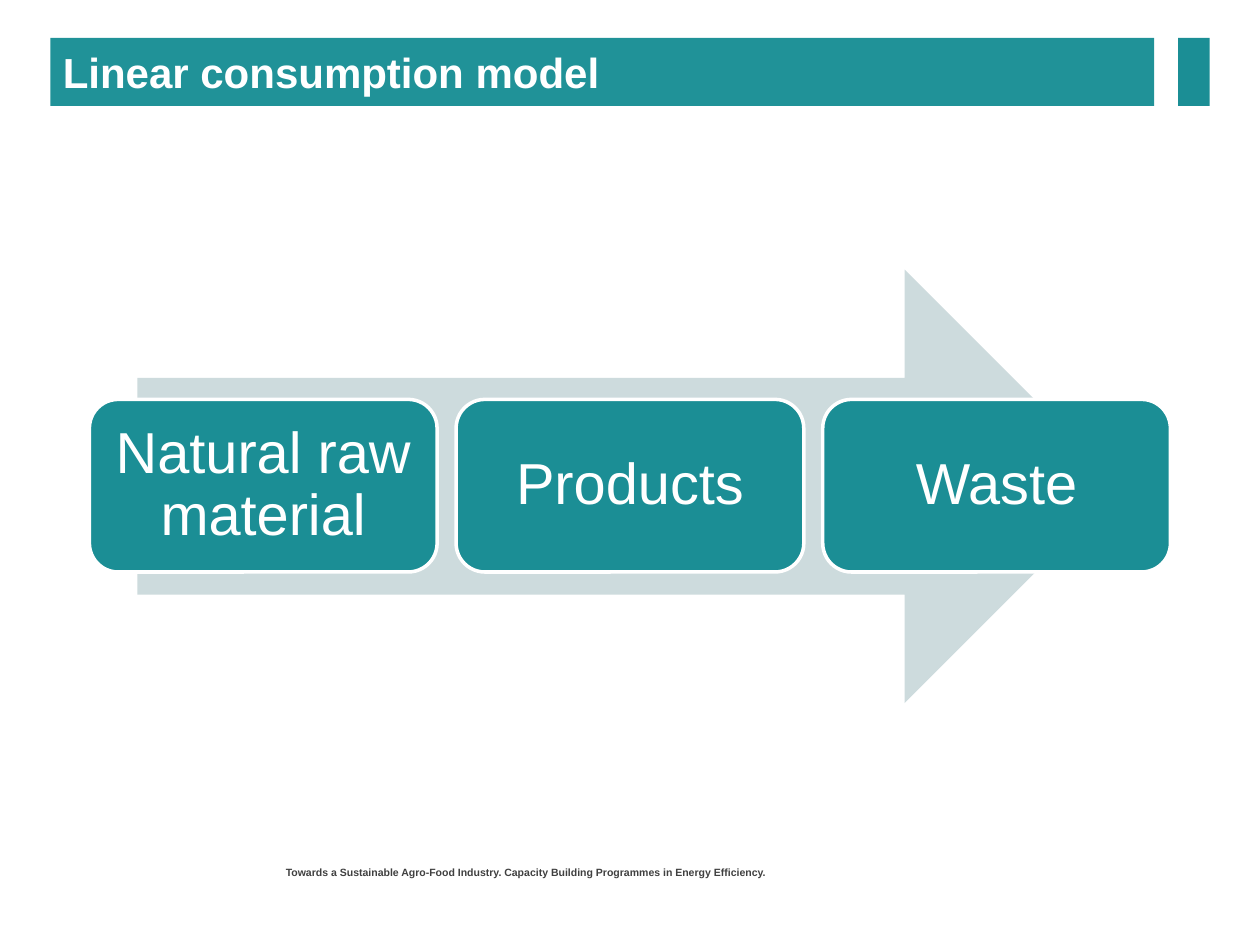
from pptx import Presentation
from pptx.dml.color import RGBColor
from pptx.enum.shapes import MSO_SHAPE as Shape
from pptx.enum.text import MSO_ANCHOR as Anchor, PP_ALIGN as Align
from pptx.util import Inches, Pt

FONT = "Arial"
TEAL = "1B8E95"
TITLE_TEAL = "209298"
PALE = "CDDBDD"
WHITE = "FFFFFF"
GREY = "404040"

STAGES = ["Natural raw material", "Products", "Waste"]
STAGE_LEFT, STAGE_TOP = 0.71, 3.17
STAGE_WIDTH, STAGE_HEIGHT = 2.76, 1.37
STAGE_PITCH = 2.91


def rgb(color):
    return RGBColor.from_string(color)


def write(sp, text, size, color, bold=False, align=Align.LEFT, anchor=Anchor.MIDDLE):
    tf = sp.text_frame
    tf.word_wrap = True
    tf.vertical_anchor = anchor
    p = tf.paragraphs[0]
    p.alignment = align
    r = p.add_run()
    r.text = text
    r.font.name = FONT
    r.font.size = Pt(size)
    r.font.bold = bold
    r.font.color.rgb = rgb(color)
    return p


def add_block(slide, kind, left, top, width, height, fill):
    sp = slide.shapes.add_shape(
        kind, Inches(left), Inches(top), Inches(width), Inches(height))
    sp.shadow.inherit = False
    sp.fill.solid()
    sp.fill.fore_color.rgb = rgb(fill)
    sp.line.fill.background()
    return sp


def add_stage(slide, index, text):
    left = STAGE_LEFT + index * STAGE_PITCH
    sp = add_block(slide, Shape.ROUNDED_RECTANGLE, left, STAGE_TOP,
                   STAGE_WIDTH, STAGE_HEIGHT, TEAL)
    sp.line.color.rgb = rgb(WHITE)
    sp.line.width = Pt(2)
    p = write(sp, text, 33, WHITE, align=Align.CENTER)
    p.line_spacing = 0.9
    tf = sp.text_frame
    tf.margin_left = tf.margin_right = Inches(0.14)
    tf.margin_top = tf.margin_bottom = Inches(0.14)


def add_footer(slide, text):
    sp = slide.shapes.add_textbox(
        Inches(2.17), Inches(6.82), Inches(5.5), Inches(0.21))
    write(sp, text, 6, GREY, bold=True, anchor=Anchor.TOP)


def main():
    prs = Presentation()
    prs.slide_width, prs.slide_height = Inches(10), Inches(7.5)
    slide = prs.slides.add_slide(prs.slide_layouts[6])

    add_footer(slide, "Towards a Sustainable Agro-Food Industry. "
                      "Capacity Building Programmes in Energy Efficiency.")
    title = add_block(slide, Shape.RECTANGLE, 0.4, 0.3, 8.76, 0.54, TITLE_TEAL)
    write(title, "Linear consumption model", 24, WHITE, bold=True)
    add_block(slide, Shape.RECTANGLE, 9.35, 0.3, 0.25, 0.54, TEAL)

    add_block(slide, Shape.RIGHT_ARROW, 1.09, 2.14, 7.81, 3.44, PALE)
    for index, text in enumerate(STAGES):
        add_stage(slide, index, text)

    prs.save("out.pptx")


if __name__ == "__main__":
    main()
